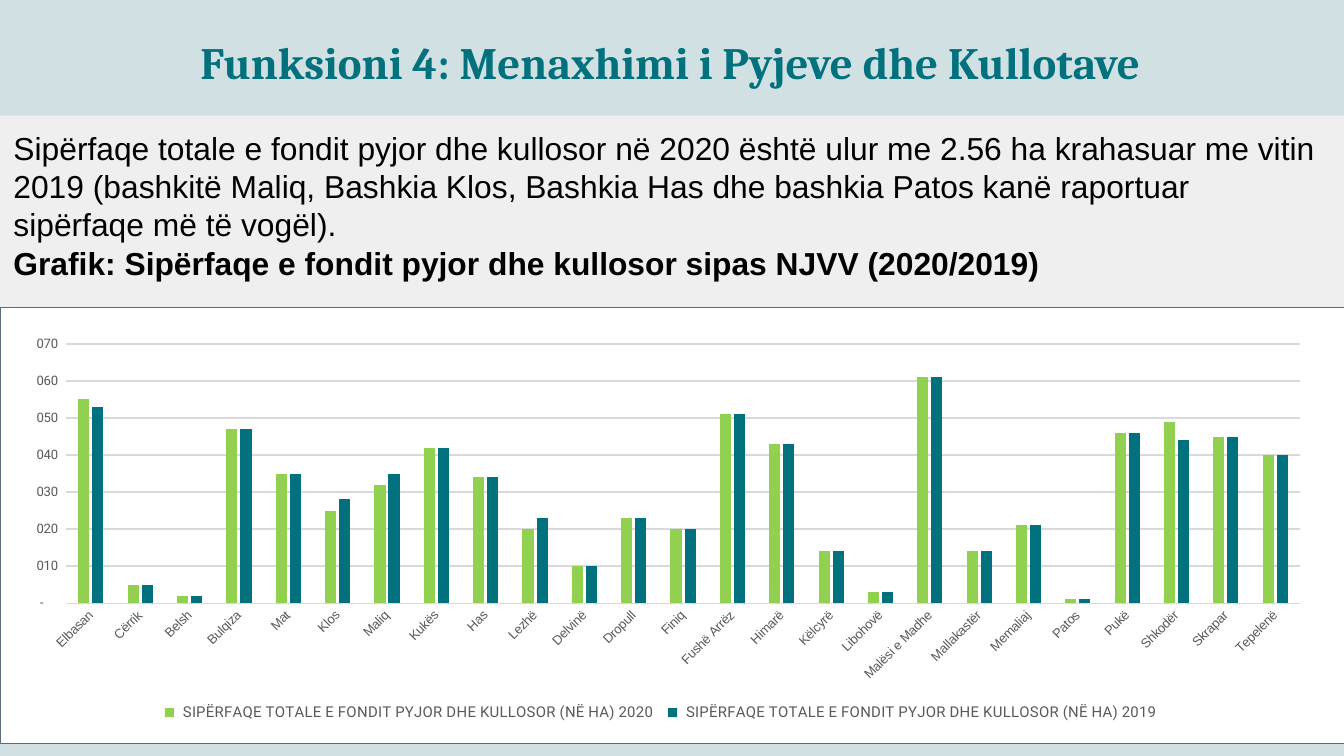
from lxml.etree import SubElement
from pptx import Presentation
from pptx.chart.data import CategoryChartData
from pptx.dml.color import RGBColor
from pptx.enum.chart import XL_CHART_TYPE, XL_LEGEND_POSITION, XL_TICK_MARK
from pptx.enum.shapes import MSO_SHAPE
from pptx.enum.text import MSO_ANCHOR, MSO_AUTO_SIZE, PP_ALIGN
from pptx.oxml import parse_xml
from pptx.oxml.ns import nsdecls, qn
from pptx.util import Inches, Pt

COLORS = {
    "background": "D0E0E3", "panel": "EFEFEF", "white": "FFFFFF",
    "teal": "00717D", "green": "92D050", "black": "000000",
    "frame": "586D77", "label": "595959", "grid": "D9D9D9",
}

TITLE = "Funksioni 4: Menaxhimi i Pyjeve dhe Kullotave"
SUMMARY = (
    "Sipërfaqe totale e fondit pyjor dhe kullosor në 2020 është ulur me 2.56 ha "
    "krahasuar me vitin 2019 (bashkitë Maliq, Bashkia Klos, Bashkia Has dhe "
    "bashkia Patos kanë raportuar sipërfaqe më të vogël)."
)
CAPTION = "Grafik: Sipërfaqe e fondit pyjor dhe kullosor sipas NJVV (2020/2019)"
SERIES_NAME = " SIPËRFAQE TOTALE E FONDIT PYJOR DHE KULLOSOR (NË HA) {} "

AREAS = [
    ("Elbasan", 55, 53), ("Cërrik", 5, 5), ("Belsh", 2, 2),
    ("Bulqiza", 47, 47), ("Mat", 35, 35), ("Klos", 25, 28),
    ("Maliq", 32, 35), ("Kukës", 42, 42), ("Has", 34, 34),
    ("Lezhë", 20, 23), ("Delvinë", 10, 10), ("Dropull", 23, 23),
    ("Finiq", 20, 20), ("Fushë Arrëz", 51, 51), ("Himarë", 43, 43),
    ("Këlcyrë", 14, 14), ("Libohovë", 3, 3), ("Malësi e Madhe", 61, 61),
    ("Mallakastër", 14, 14), ("Memaliaj", 21, 21), ("Patos", 1, 1),
    ("Pukë", 46, 46), ("Shkodër", 49, 44), ("Skrapar", 45, 45),
    ("Tepelenë", 40, 40),
]


def rgb(name):
    return RGBColor.from_string(COLORS[name])


def set_font(font, size, color, name="Arial", bold=False):
    font.size, font.name, font.bold = Pt(size), name, bold
    font.color.rgb = rgb(color)


def add_text(p, text, align=PP_ALIGN.LEFT, **style):
    p.alignment, p.line_spacing = align, 1.0
    p.space_before = p.space_after = Pt(0)
    r = p.add_run()
    r.text = text
    set_font(r.font, **style)


class SlideBuilder:
    def __init__(self, prs):
        self.slide = prs.slides.add_slide(prs.slide_layouts[1])
        fill = self.slide.background.fill
        fill.solid()
        fill.fore_color.rgb = rgb("background")

    def placeholder(self, idx, box, anchor):
        sp = self.slide.placeholders[idx]
        sp.left, sp.top, sp.width, sp.height = map(Inches, box)
        tf = sp.text_frame
        tf.word_wrap, tf.auto_size = True, MSO_AUTO_SIZE.NONE
        tf.vertical_anchor = anchor
        tf.margin_left = tf.margin_right = Inches(0.1)
        tf.margin_top = tf.margin_bottom = Inches(0.1)
        return tf

    def title(self, text, box):
        tf = self.placeholder(0, box, MSO_ANCHOR.MIDDLE)
        add_text(tf.paragraphs[0], text, PP_ALIGN.CENTER,
                 size=24, color="teal", name="Cambria", bold=True)

    def body(self, paragraphs, box):
        tf = self.placeholder(1, box, MSO_ANCHOR.TOP)
        for i, (text, bold) in enumerate(paragraphs):
            p = tf.add_paragraph() if i else tf.paragraphs[0]
            add_text(p, text, size=17, color="black", bold=bold)
            pPr = p._p.get_or_add_pPr()
            pPr.set("marL", "0")
            pPr.set("indent", "0")
            SubElement(pPr, qn("a:buNone"))

    def rectangle(self, box, fill, line=None, behind=False):
        sp = self.slide.shapes.add_shape(MSO_SHAPE.RECTANGLE, *map(Inches, box))
        sp.shadow.inherit = False
        sp.fill.solid()
        sp.fill.fore_color.rgb = rgb(fill)
        if line:
            sp.line.color.rgb, sp.line.width = rgb(line), Pt(0.25)
        else:
            sp.line.fill.background()
        if behind:
            self.slide.shapes.title.element.addprevious(sp.element)

    def column_chart(self, rows, names, colors, box, plot_box):
        categories, *columns = zip(*rows)
        data = CategoryChartData()
        data.categories = categories
        for name, values in zip(names, columns):
            data.add_series(name, values)
        chart = self.slide.shapes.add_chart(
            XL_CHART_TYPE.COLUMN_CLUSTERED, *map(Inches, box), data).chart
        chart.has_title = False
        set_font(chart.font, 10, "black")
        plot = chart.plots[0]
        plot.gap_width, plot.overlap, plot.vary_by_categories = 219, -27, False
        for series, color in zip(plot.series, colors):
            series.format.fill.solid()
            series.format.fill.fore_color.rgb = rgb(color)

        cat, val = chart.category_axis, chart.value_axis
        for axis, font in ((cat, "Arial"), (val, "Roboto")):
            axis.major_tick_mark = axis.minor_tick_mark = XL_TICK_MARK.NONE
            set_font(axis.tick_labels.font, 7, "label", font)
        val.minimum_scale, val.maximum_scale, val.major_unit = 0, 70, 10
        val.has_major_gridlines = True
        val.format.line.fill.background()
        val.tick_labels.number_format = '000_);(000);"-"??_)'
        val.tick_labels.number_format_is_linked = False
        for line in (cat.format.line, val.major_gridlines.format.line):
            line.color.rgb, line.width = rgb("grid"), Pt(0.75)

        chart.has_legend = True
        chart.legend.position = XL_LEGEND_POSITION.BOTTOM
        chart.legend.include_in_layout = False
        set_font(chart.legend.font, 8, "label", "Roboto")

        root = chart.element
        root.xpath(".//c:catAx/c:txPr/a:bodyPr")[0].set("rot", "-2700000")
        area = root.xpath(".//c:plotArea")[0]
        for old in area.findall(qn("c:layout")):
            area.remove(old)
        area.insert(0, self.plot_layout(plot_box))

    def plot_layout(self, box):
        sizes = "".join(f'<c:{k} val="{v}"/>' for k, v in zip("xywh", box))
        return parse_xml(
            f'<c:layout {nsdecls("c")}><c:manualLayout>'
            '<c:layoutTarget val="inner"/><c:xMode val="edge"/>'
            f'<c:yMode val="edge"/>{sizes}</c:manualLayout></c:layout>')


def main():
    prs = Presentation()
    prs.slide_width = Inches(10)
    prs.slide_height = prs.slide_width * 9 // 16
    s = SlideBuilder(prs)
    s.rectangle((0, 0.86, 10, 4.06), "panel", behind=True)
    s.title(TITLE, (0.19, 0.1, 9.59, 0.72))
    s.body([(SUMMARY, False), (CAPTION, True)], (0, 0.86, 10, 4.67))
    s.rectangle((0, 2.29, 10, 3.24), "white", line="frame")
    s.column_chart(AREAS, [SERIES_NAME.format(year) for year in (2020, 2019)],
                   ("green", "teal"), (0, 2.44, 9.87, 2.97),
                   (0.05, 0.04, 0.93, 0.65))
    prs.save("out.pptx")


if __name__ == "__main__":
    main()
